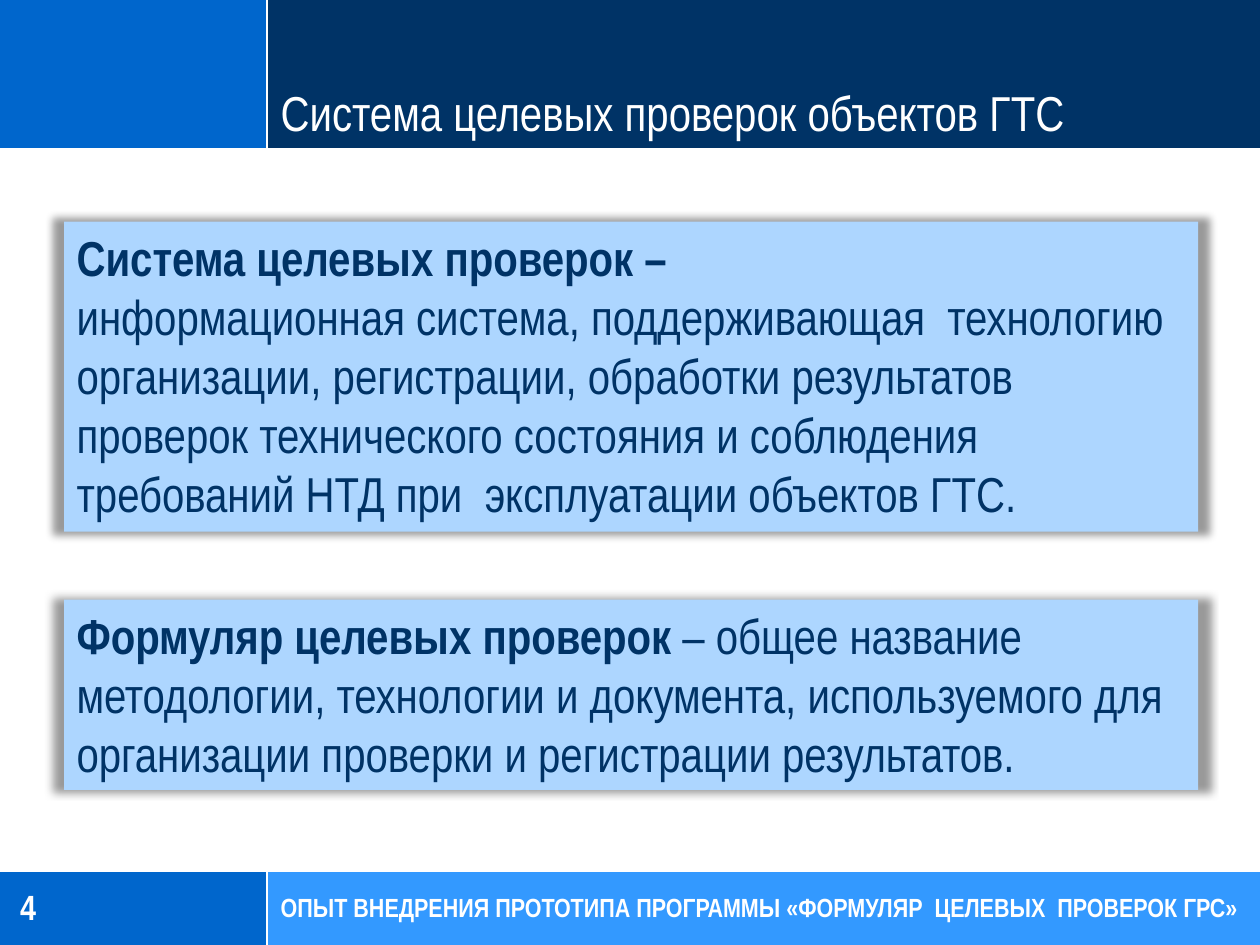
import dataclasses

import lxml.etree
import pptx
import pptx.dml.color
import pptx.enum.shapes
import pptx.enum.text
import pptx.oxml.ns
import pptx.util

Inches = pptx.util.Inches
Anchor = pptx.enum.text.MSO_ANCHOR
qn = pptx.oxml.ns.qn


@dataclasses.dataclass(frozen=True)
class Theme:
    font: str = "Arial Narrow"
    navy: str = "003366"
    blue: str = "0066CC"
    sky: str = "3399FF"
    pale: str = "ADD6FF"
    white: str = "FFFFFF"
    shadow: str = "000000"
    body_size: int = 28
    number_size: int = 20
    footer_size: int = 15
    rule_width: float = 1.25


THEME = Theme()

# Frame of the slide: one column edge, header and footer edges
WIDTH, HEIGHT = 10, 7.5
SPLIT, HEADER, FOOTER = 2.12, 1.18, 6.91


def rgb(value):
    return pptx.dml.color.RGBColor.from_string(value)


def set_all(target, values):
    for name, value in values.items():
        setattr(target, name, value)


def add_block(slide, left, top, right, bottom, fill):
    """Plain filled rectangle given by its edges."""
    block = slide.shapes.add_shape(
        pptx.enum.shapes.MSO_SHAPE.RECTANGLE,
        Inches(left), Inches(top), Inches(right - left), Inches(bottom - top))
    block.shadow.inherit = False
    block.fill.solid()
    block.fill.fore_color.rgb = rgb(fill)
    block.line.fill.background()
    return block


def add_rule(slide, x1, y1, x2, y2):
    rule = slide.shapes.add_connector(
        pptx.enum.shapes.MSO_CONNECTOR.STRAIGHT,
        Inches(x1), Inches(y1), Inches(x2), Inches(y2))
    rule.line.color.rgb = rgb(THEME.white)
    rule.line.width = pptx.util.Pt(THEME.rule_width)
    lxml.etree.SubElement(rule._element.spPr, qn("a:effectLst"))


def write(frame, paragraphs, size, color, **frame_format):
    """Fill a text frame; each paragraph is a list of (text, bold) runs."""
    set_all(frame, {"word_wrap": True, **frame_format})
    for index, runs in enumerate(paragraphs):
        paragraph = frame.add_paragraph() if index else frame.paragraphs[0]
        paragraph.alignment = pptx.enum.text.PP_ALIGN.LEFT
        for text, bold in runs:
            run = paragraph.add_run()
            run.text = text
            set_all(run.font, {"name": THEME.font, "bold": bold,
                               "size": pptx.util.Pt(size)})
            run.font.color.rgb = rgb(color)


def add_label(slide, left, top, width, height, text, size, bold, **frame_format):
    label = slide.shapes.add_textbox(
        Inches(left), Inches(top), Inches(width), Inches(height))
    write(label.text_frame, [[(text, bold)]], size, THEME.white, **frame_format)


def add_halo(block):
    """Soft shadow slightly larger than the block on all sides."""
    effects = block._element.spPr.find(qn("a:effectLst"))
    halo = lxml.etree.SubElement(
        effects, qn("a:outerShdw"), blurRad=str(pptx.util.Pt(5)),
        sx="102000", sy="102000", algn="ctr", rotWithShape="0")
    color = lxml.etree.SubElement(halo, qn("a:srgbClr"), val=THEME.shadow)
    lxml.etree.SubElement(color, qn("a:alpha"), val="40000")


def add_definition(slide, top, height, paragraphs):
    card = add_block(slide, 0.51, top, 9.51, top + height, THEME.pale)
    add_halo(card)
    write(card.text_frame, paragraphs, THEME.body_size, THEME.navy,
          vertical_anchor=Anchor.TOP,
          auto_size=pptx.enum.text.MSO_AUTO_SIZE.SHAPE_TO_FIT_TEXT)


def add_background(slide):
    add_block(slide, SPLIT, 0, WIDTH, HEADER, THEME.navy)
    add_block(slide, SPLIT, FOOTER, WIDTH, HEIGHT, THEME.sky)
    add_block(slide, 0, 0, SPLIT, HEADER, THEME.blue)
    add_block(slide, 0, FOOTER, SPLIT, HEIGHT, THEME.blue)
    add_rule(slide, SPLIT, HEIGHT, SPLIT, 0)
    for edge in (HEADER, FOOTER):
        add_rule(slide, WIDTH, edge, 0, edge)
    add_block(slide, 0, HEADER, WIDTH, FOOTER, THEME.white)


def main():
    deck = pptx.Presentation()
    set_all(deck, {"slide_width": Inches(WIDTH), "slide_height": Inches(HEIGHT)})
    slide = deck.slides.add_slide(deck.slide_layouts[6])
    add_background(slide)

    # Title and slide number
    add_label(slide, 2.13, 0, 7.87, 1.17, "Система целевых проверок объектов ГТС",
              THEME.body_size, False, vertical_anchor=Anchor.BOTTOM)
    add_label(slide, 0, 6.9, 2.09, 0.59, "4", THEME.number_size, True,
              vertical_anchor=Anchor.MIDDLE, margin_left=Inches(0.16))

    # Definitions
    add_definition(slide, 4.76, 1.51, [[
        ("Формуляр целевых проверок ", True),
        ("– общее название методологии, технологии и документа, используемого "
         "для организации проверки и регистрации результатов.", False)]])
    add_definition(slide, 1.76, 2.46, [
        [("Система целевых проверок –", True)],
        [("информационная система, поддерживающая  технологию организации, "
          "регистрации, обработки результатов проверок технического состояния "
          "и соблюдения требований НТД при  эксплуатации объектов ГТС.", False)]])

    # Footer
    add_label(slide, 2.13, 6.9, 7.87, 0.59,
              "ОПЫТ ВНЕДРЕНИЯ ПРОТОТИПА ПРОГРАММЫ «ФОРМУЛЯР  ЦЕЛЕВЫХ  ПРОВЕРОК ГРС»",
              THEME.footer_size, True, vertical_anchor=Anchor.MIDDLE)

    deck.save("out.pptx")


if __name__ == "__main__":
    main()
